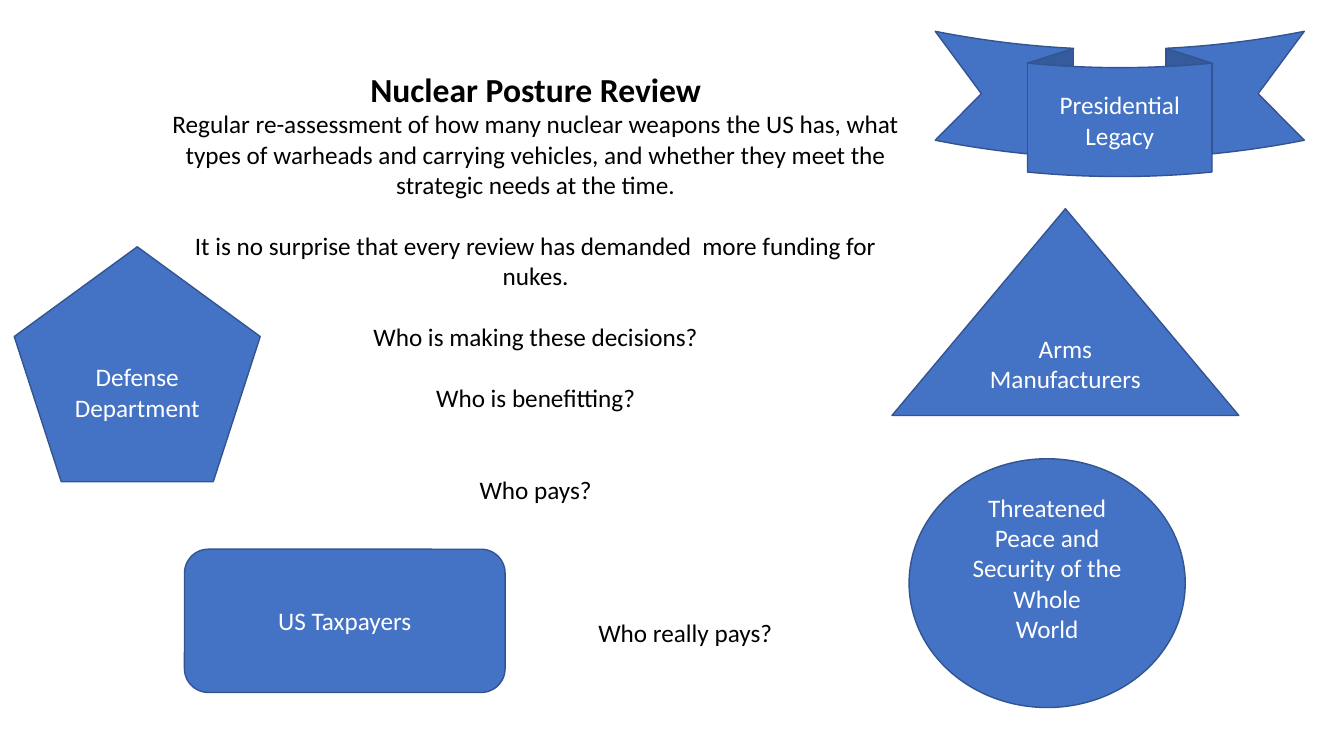
"""Build the Nuclear Posture Review slide with its labelled shapes."""
from pptx import Presentation
from pptx.dml.color import RGBColor
from pptx.enum.shapes import MSO_SHAPE
from pptx.enum.text import MSO_ANCHOR, PP_ALIGN
from pptx.util import Cm, Pt

BLUE = RGBColor(0x44, 0x72, 0xC4)
NAVY = RGBColor(0x32, 0x54, 0x91)
BLACK = RGBColor(0, 0, 0)
WHITE = RGBColor(255, 255, 255)
LINE_GAP = 22


class SlideBuilder:
    """Hold the text style and the slide being drawn."""

    def __init__(self, slide):
        self.s = slide
        self.font = {"name": "Calibri", "size": Pt(18), "bold": False}

    def paragraph(self, p, text, color, align=PP_ALIGN.CENTER, gap=0, **extra):
        """Fill one paragraph, with a gap above it in points."""
        for key, value in {"alignment": align, "space_before": Pt(gap)}.items():
            setattr(p, key, value)
        r = p.add_run()
        r.text = text
        for key, value in {**self.font, **extra}.items():
            setattr(r.font, key, value)
        r.font.color.rgb = color
        return p

    def text(self, box, rows, align=PP_ALIGN.CENTER):
        """Add a text box whose rows are (text, gap, font changes)."""
        tf = self.s.shapes.add_textbox(*map(Cm, box)).text_frame
        tf.word_wrap = True
        for i, (line, gap, extra) in enumerate(rows):
            p = tf.add_paragraph() if i else tf.paragraphs[0]
            self.paragraph(p, line, BLACK, align, gap, **extra)
        return tf

    def shape(self, kind, box, lines):
        """Add a blue shape with a centred white label."""
        sp = self.s.shapes.add_shape(kind, *map(Cm, box))
        sp.shadow.inherit = False
        sp.fill.solid()
        sp.fill.fore_color.rgb = BLUE
        sp.line.color.rgb = NAVY
        sp.line.width = Pt(1)
        tf = sp.text_frame
        for key, value in {"word_wrap": True, "vertical_anchor": MSO_ANCHOR.MIDDLE}.items():
            setattr(tf, key, value)
        for i, line in enumerate(lines):
            p = tf.add_paragraph() if i else tf.paragraphs[0]
            self.paragraph(p, line, WHITE)
        return sp


def main():
    """Draw the slide and save it."""
    prs = Presentation()
    prs.slide_width, prs.slide_height = Cm(33.87), Cm(19.05)
    slide = SlideBuilder(prs.slides.add_slide(prs.slide_layouts[6]))

    review = slide.text((3.99, 1.6, 19.58, 10.52), [
        ("Nuclear Posture Review", 0, {"size": Pt(24), "bold": True}),
        ("Regular re-assessment of how many nuclear weapons the US has, what types of "
         "warheads and carrying vehicles, and whether they meet the strategic needs "
         "at the time.", 0, {}),
        ("It is no surprise that every review has demanded  more funding for nukes.",
         LINE_GAP, {}),
        ("Who is making these decisions?", LINE_GAP, {}),
        ("Who is benefitting?", LINE_GAP, {}),
        ("Who pays?", 2 * LINE_GAP, {}),
    ])
    review.paragraphs[0]._p.get_or_add_pPr().set("marR", str(Cm(0.56)))

    slide.shape(MSO_SHAPE.ROUNDED_RECTANGLE, (4.65, 13.84, 8.08, 3.61), ["US Taxpayers"])
    world = slide.shape(MSO_SHAPE.OVAL, (22.91, 11.56, 6.96, 6.27),
                        ["Threatened", "Peace and Security of the", "Whole", "World"])
    world.text_frame.margin_bottom = Cm(0.9)
    slide.shape(MSO_SHAPE.REGULAR_PENTAGON, (0.36, 6.22, 6.2, 5.92),
                ["Defense", "Department"])
    arms = slide.shape(MSO_SHAPE.ISOSCELES_TRIANGLE, (22.48, 5.26, 8.74, 5.21),
                       ["Arms", "Manufacturers"])
    arms.adjustments[0] = 0.5
    slide.shape(MSO_SHAPE.CURVED_DOWN_RIBBON, (23.57, 0.79, 9.3, 3.66),
                ["Presidential", "Legacy"])
    slide.text((14.83, 15.42, 6.3, 1.02), [("Who really pays?", 0, {})], PP_ALIGN.LEFT)

    prs.save("out.pptx")


if __name__ == "__main__":
    main()
